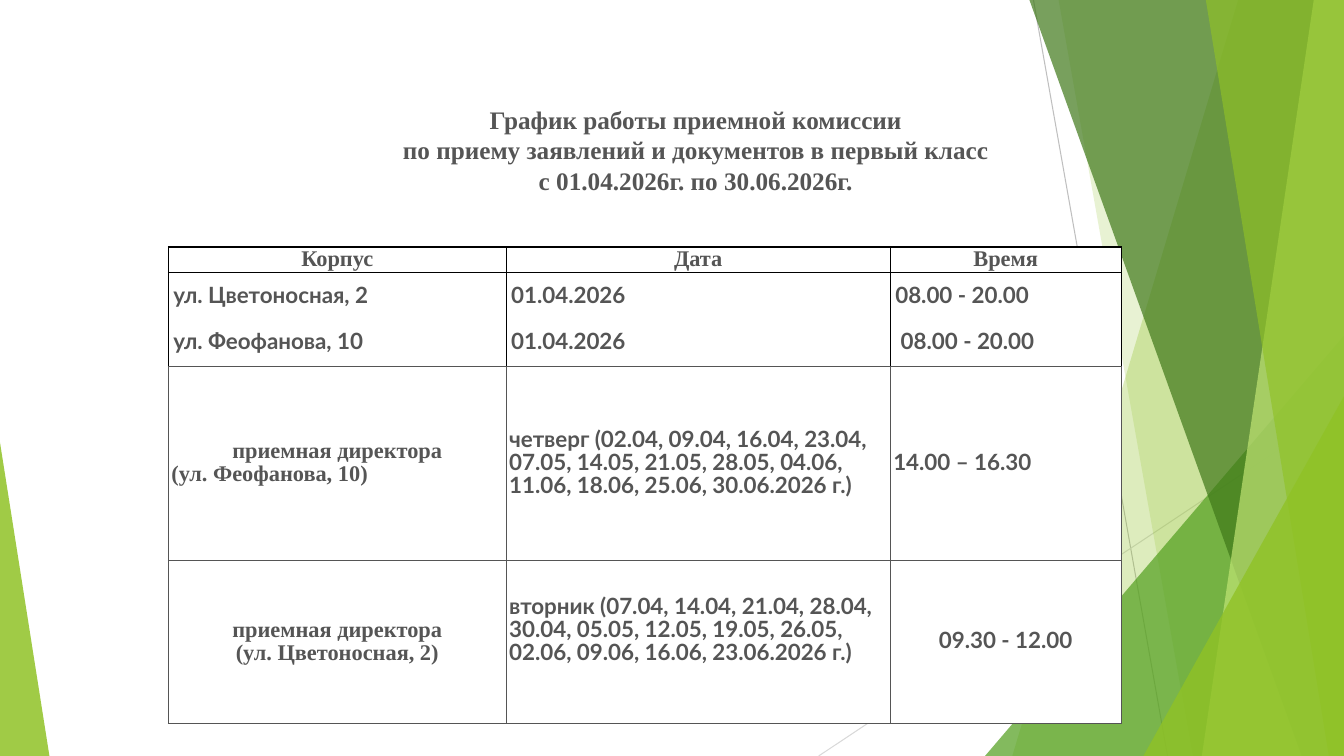
"""Build the slide with the admission office timetable."""
from dataclasses import dataclass

from lxml import etree
from pptx import Presentation
from pptx import util as u
from pptx.dml.color import RGBColor
from pptx.enum import shapes, text
from pptx.oxml import ns

WIDTH, HEIGHT = 13.33, 7.5
GREY, BLACK, WHITE, GREEN = "555555", "000000", "FFFFFF", "90C226"
SERIF, SANS = "Times New Roman", "Lato"
LEFT, CENTER = text.PP_ALIGN.LEFT, text.PP_ALIGN.CENTER
MIDDLE = text.MSO_ANCHOR.MIDDLE


@dataclass
class Ray:
    start: tuple[float, float]
    end: tuple[float, float]
    color: str


@dataclass
class Band:
    top: float
    bottom: float
    color: str
    opacity: int


@dataclass
class Corner:
    left: float
    top: float
    width: float
    apex: float
    color: str
    opacity: int


@dataclass
class Entry:
    lines: list[str]
    font: str = SANS
    aligns: tuple = (LEFT,)
    gap: float = 0
    lift: float = 0


RAYS = [Ray((10.25, 0), (11.58, 7.5), "BFBFBF"), Ray((13.33, 4.03), (8.12, 7.5), "D9D9D9")]
DECOR = [
    Band(12.28, 10.04, GREEN, 30),
    Band(10.5, 11.83, GREEN, 20),
    Corner(9.77, 3.33, 3.56, 1, "54A021", 72),
    Band(10.21, 12.91, "3F7819", 70),
    Band(13.03, 11.92, "C0E474", 70),
    Band(11.96, 13.18, GREEN, 65),
    Corner(11.34, 3.93, 1.99, 1, GREEN, 80),
    Corner(0, 4.39, 0.49, 0, GREEN, 85),
]
TITLE = [
    "График работы приемной комиссии",
    "по приему заявлений и документов в первый класс",
    "с 01.04.2026г. по 30.06.2026г.",
]
COLUMNS = [3.35, 3.81, 2.29]
ROWS = [0.25, 0.94, 1.92, 1.62]
THURSDAYS = ("четверг (02.04, 09.04, 16.04, 23.04, 07.05, 14.05, 21.05, 28.05, "
             "04.06, 11.06, 18.06, 25.06, 30.06.2026 г.)")
TUESDAYS = ("вторник (07.04, 14.04, 21.04, 28.04, 30.04, 05.05, 12.05, 19.05, "
            "26.05, 02.06, 09.06, 16.06, 23.06.2026 г.)")
OFFICE = "приемная директора"
ENTRIES = [
    [Entry([name], SERIF, (CENTER,)) for name in ("Корпус", "Дата", "Время")],
    [Entry(["ул. Цветоносная, 2", "ул. Феофанова, 10"], gap=16.5),
     Entry(["01.04.2026", "01.04.2026"], gap=16.5),
     Entry(["08.00 - 20.00", " 08.00 - 20.00"], gap=16.5)],
    [Entry([OFFICE, "(ул. Феофанова, 10)"], SERIF, (CENTER, LEFT)),
     Entry([THURSDAYS]),
     Entry(["14.00 – 16.30"])],
    [Entry([OFFICE, "(ул. Цветоносная, 2)"], SERIF, (CENTER, CENTER)),
     Entry([TUESDAYS], lift=0.23),
     Entry(["09.30 - 12.00"], aligns=(CENTER,))],
]


def rgb(color: str) -> RGBColor:
    return RGBColor.from_string(color)


def paint(shape, color: str, opacity: int) -> None:
    shape.shadow.inherit = False
    shape.line.fill.background()
    shape.fill.solid()
    shape.fill.fore_color.rgb = rgb(color)
    tint = shape.fill._xPr.find(".//" + ns.qn("a:srgbClr"))
    etree.SubElement(tint, ns.qn("a:alpha"), val=str(opacity * 1000))


def add_ray(page, ray: Ray) -> None:
    points = [u.Inches(value) for value in ray.start + ray.end]
    line = page.shapes.add_connector(shapes.MSO_CONNECTOR.STRAIGHT, *points)
    line.line.color.rgb = rgb(ray.color)
    line.line.width = u.Pt(0.75)
    etree.SubElement(line._element.spPr, ns.qn("a:effectLst"))


def add_band(page, band: Band) -> None:
    outline = [(band.top, 0), (WIDTH, 0), (WIDTH, HEIGHT), (band.bottom, HEIGHT)]
    points = [(u.Inches(x), u.Inches(y)) for x, y in outline]
    builder = page.shapes.build_freeform(*points[0])
    builder.add_line_segments(points[1:], close=True)
    paint(builder.convert_to_shape(), band.color, band.opacity)


def add_corner(page, corner: Corner) -> None:
    triangle = page.shapes.add_shape(
        shapes.MSO_SHAPE.ISOSCELES_TRIANGLE, u.Inches(corner.left), u.Inches(corner.top),
        u.Inches(corner.width), u.Inches(HEIGHT - corner.top))
    triangle.adjustments[0] = corner.apex
    paint(triangle, corner.color, corner.opacity)


def write(para, content: str, *, size: float, font: str, align, spacing=None, before: float = 0) -> None:
    para.alignment = align
    para.line_spacing = spacing
    if before:
        para.space_before = u.Pt(before)
    span = para.add_run()
    span.text = content
    span.font.size = u.Pt(size)
    span.font.name = font
    span.font.bold = True
    span.font.color.rgb = rgb(GREY)


def add_title(page) -> None:
    box = page.shapes.add_textbox(u.Inches(3.43), u.Inches(0.98), u.Inches(6.94), u.Inches(1.01))
    frame = box.text_frame
    frame.word_wrap = True
    frame.vertical_anchor = MIDDLE
    for index, line in enumerate(TITLE):
        para = frame.add_paragraph() if index else frame.paragraphs[0]
        write(para, line, size=18, font=SERIF, align=CENTER)


def add_borders(cell, row: int) -> None:
    properties = cell._tc.get_or_add_tcPr()
    for position, side in enumerate(("lnL", "lnR", "lnT", "lnB")):
        dark = row == 0 or (row == 1 and side != "lnB")
        border = etree.Element(ns.qn(f"a:{side}"), w=str(u.Pt(1 if dark else 0.75)))
        fill = etree.SubElement(border, ns.qn("a:solidFill"))
        etree.SubElement(fill, ns.qn("a:srgbClr"), val=BLACK if dark else GREY)
        properties.insert(position, border)


def fill_cell(cell, entry: Entry, row: int) -> None:
    side, edge = (0.05, 0) if row < 2 else (0.03, 0.06)
    cell.margin_left = cell.margin_right = u.Inches(side)
    cell.margin_top = u.Inches(edge)
    cell.margin_bottom = u.Inches(edge + entry.lift)
    cell.vertical_anchor = MIDDLE
    cell.fill.solid()
    cell.fill.fore_color.rgb = rgb(WHITE)
    add_borders(cell, row)
    frame = cell.text_frame
    for index, line in enumerate(entry.lines):
        para = frame.add_paragraph() if index else frame.paragraphs[0]
        write(para, line, size=16, font=entry.font, align=entry.aligns[index % len(entry.aligns)],
              spacing=u.Pt(16.5), before=entry.gap if index else 0)


def add_timetable(page) -> None:
    table = page.shapes.add_table(
        len(ROWS), len(COLUMNS), u.Inches(1.67), u.Inches(2.45),
        u.Inches(sum(COLUMNS)), u.Inches(sum(ROWS))).table
    table.first_row = table.horz_banding = False
    for column, width in zip(table.columns, COLUMNS):
        column.width = u.Inches(width)
    for row, height in enumerate(ROWS):
        table.rows[row].height = u.Inches(height)
        for column, entry in enumerate(ENTRIES[row]):
            fill_cell(table.cell(row, column), entry, row)


def main() -> None:
    deck = Presentation()
    deck.slide_width, deck.slide_height = u.Inches(WIDTH), u.Inches(HEIGHT)
    page = deck.slides.add_slide(deck.slide_layouts[6])
    for ray in RAYS:
        add_ray(page, ray)
    for item in DECOR:
        if isinstance(item, Band):
            add_band(page, item)
        else:
            add_corner(page, item)
    add_timetable(page)
    add_title(page)
    deck.save("out.pptx")


if __name__ == "__main__":
    main()
